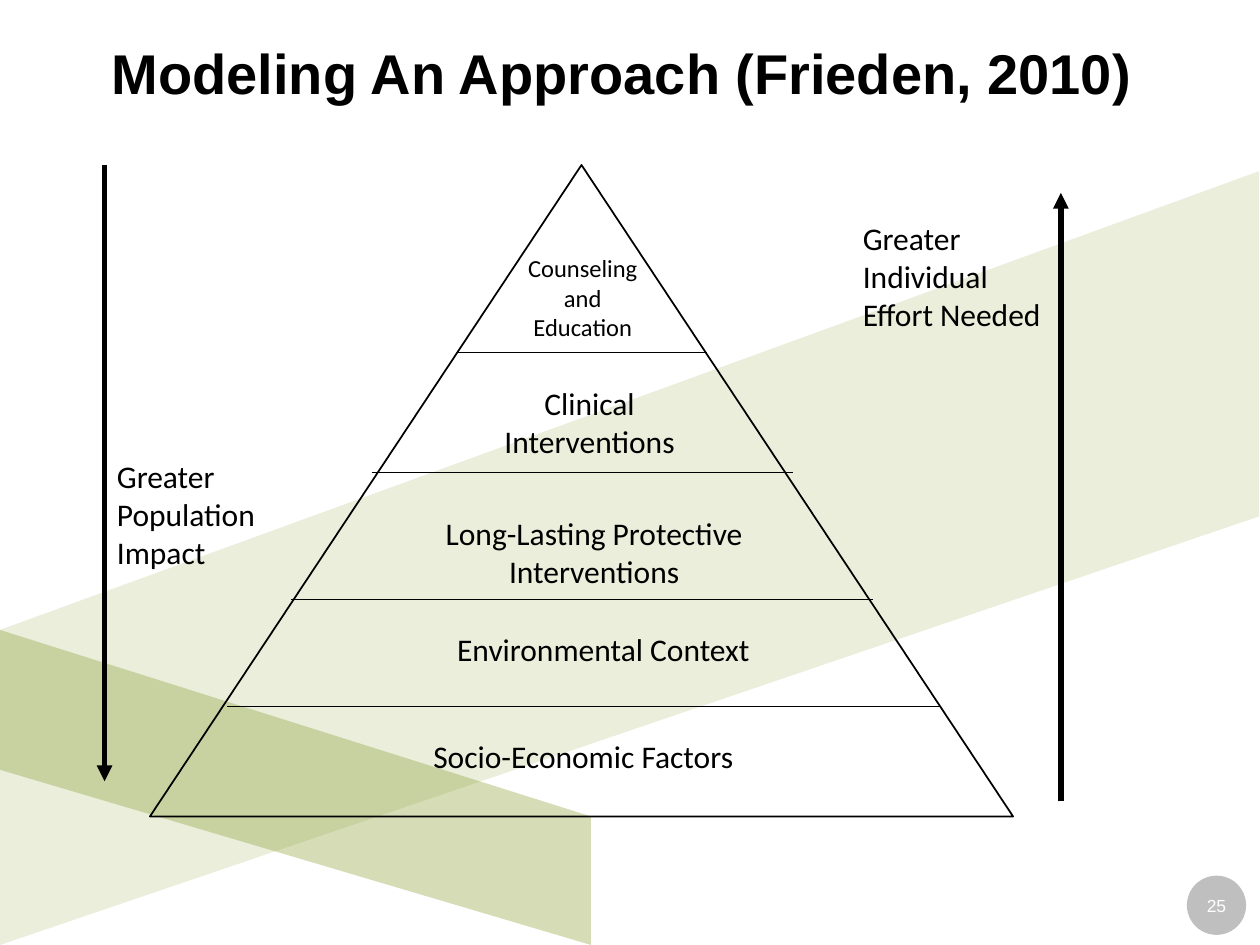
"""Build a slide showing a five-tier pyramid of health interventions."""
from lxml import etree
from pptx import Presentation
from pptx import util as u
from pptx.dml.color import RGBColor
from pptx.enum import shapes, text
from pptx.oxml import ns

COLORS = {"ink": "000000", "band": "94A545", "badge": "BFBFBF", "paper": "FFFFFF"}
COLUMNS, ROWS = 100, 75
CENTER, LEFT = text.PP_ALIGN.CENTER, text.PP_ALIGN.LEFT


class Page:
    """Draws styled elements on one slide, in grid columns and rows."""

    def __init__(self, deck):
        self.slide = deck.slides.add_slide(deck.slide_layouts[6])
        self.column = deck.slide_width / COLUMNS
        self.row = deck.slide_height / ROWS

    def place(self, x, y):
        return round(x * self.column), round(y * self.row)

    def color(self, name):
        return RGBColor.from_string(COLORS[name])

    def add_words(self, frame, words, size, font="Calibri", color="ink", align=CENTER, bold=False):
        para = frame.paragraphs[0]
        para.alignment = align
        span = para.add_run()
        span.text = words
        span.font.name, span.font.size, span.font.bold = font, u.Pt(size), bold
        span.font.color.rgb = self.color(color)
        return para

    def band(self, corners, opacity):
        points = [self.place(*corner) for corner in corners]
        builder = self.slide.shapes.build_freeform(*points[0])
        builder.add_line_segments(points[1:], close=True)
        shape = builder.convert_to_shape()
        shape.shadow.inherit = False
        shape.line.fill.background()
        shape.fill.solid()
        shape.fill.fore_color.rgb = self.color("band")
        tint = shape._element.spPr.find(ns.qn("a:solidFill"))[0]
        etree.SubElement(tint, ns.qn("a:alpha"), val=str(opacity * 1000))

    def shape(self, kind, x, y, width, height, fill=None, line=None):
        shape = self.slide.shapes.add_shape(kind, *self.place(x, y), *self.place(width, height))
        shape.shadow.inherit = False
        if fill:
            shape.fill.solid()
            shape.fill.fore_color.rgb = self.color(fill)
        else:
            shape.fill.background()
        if line:
            shape.line.color.rgb = self.color("ink")
            shape.line.width = u.Pt(line)
        else:
            shape.line.fill.background()
        return shape

    def badge(self, words, x, y, size):
        frame = self.shape(shapes.MSO_SHAPE.OVAL, x, y, size, size, fill="badge").text_frame
        frame.margin_left = frame.margin_right = frame.margin_top = frame.margin_bottom = 0
        frame.vertical_anchor = text.MSO_ANCHOR.MIDDLE
        self.add_words(frame, words, 10, "Arial", "paper")

    def box(self, x, y, width, height):
        box = self.slide.shapes.add_textbox(*self.place(x, y), *self.place(width, height))
        box.text_frame.word_wrap = True
        return box.text_frame

    def title(self, words):
        frame = self.box(0, 1.1, COLUMNS, 10)
        frame.vertical_anchor = text.MSO_ANCHOR.MIDDLE
        self.add_words(frame, words, 32, "Arial", bold=True).line_spacing = 0.9

    def label(self, words, x, y, width, height, size=18, align=CENTER):
        frame = self.box(x, y, width, height)
        frame.auto_size = text.MSO_AUTO_SIZE.SHAPE_TO_FIT_TEXT
        self.add_words(frame, words, size, align=align)

    def line(self, start, end, weight, arrow=False):
        line = self.slide.shapes.add_connector(
            shapes.MSO_CONNECTOR.STRAIGHT, *self.place(*start), *self.place(*end))
        line.line.color.rgb = self.color("ink")
        line.line.width = u.Pt(weight)
        properties = line._element.spPr
        if arrow:
            etree.SubElement(properties.find(ns.qn("a:ln")), ns.qn("a:tailEnd"), type="triangle")
        etree.SubElement(properties, ns.qn("a:effectLst"))


def main():
    deck = Presentation()
    deck.slide_width, deck.slide_height = u.Inches(10), u.Inches(7.5)
    page = Page(deck)

    page.band([(0, 50), (99.9, 13.6), (99.9, 41), (0, ROWS)], 19)
    page.band([(46.9, 64.8), (0, 50), (0, 61.1), (46.9, ROWS)], 39)
    page.badge("25", 94.2, 69.5, 4.7)
    page.title("Modeling An Approach (Frieden, 2010) ")

    page.shape(shapes.MSO_SHAPE.ISOSCELES_TRIANGLE, 11.9, 13.1, 68.5, 51.7, line=1)
    for left, right, y in [(18, 74.6, 56.1), (23.1, 69.3, 47.6),
                           (29.5, 62.9, 37.5), (36.3, 56.1, 28)]:
        page.line((left, y), (right, y), 0.5)

    page.label("Socio-Economic Factors", 18, 58, 56.6, 4)
    page.label("Environmental Context", 35.3, 49.5, 34.6, 4, align=LEFT)
    page.label("Long-Lasting Protective Interventions", 31.4, 40.3, 31.5, 7.1)
    page.label("Clinical Interventions", 37.5, 30, 18.6, 7.1)
    page.label("Counseling and Education", 40, 19.6, 12.5, 8.1, size=14)

    page.line((8.3, 13.1), (8.3, 62), 3, arrow=True)
    page.line((84.2, 63.6), (84.2, 15.3), 3, arrow=True)
    page.label("Greater Individual Effort Needed", 67.5, 16.9, 16.4, 10.1, align=LEFT)
    page.label("Greater Population Impact", 8.3, 35.8, 14.6, 10.1, align=LEFT)

    deck.save("out.pptx")


if __name__ == "__main__":
    main()
